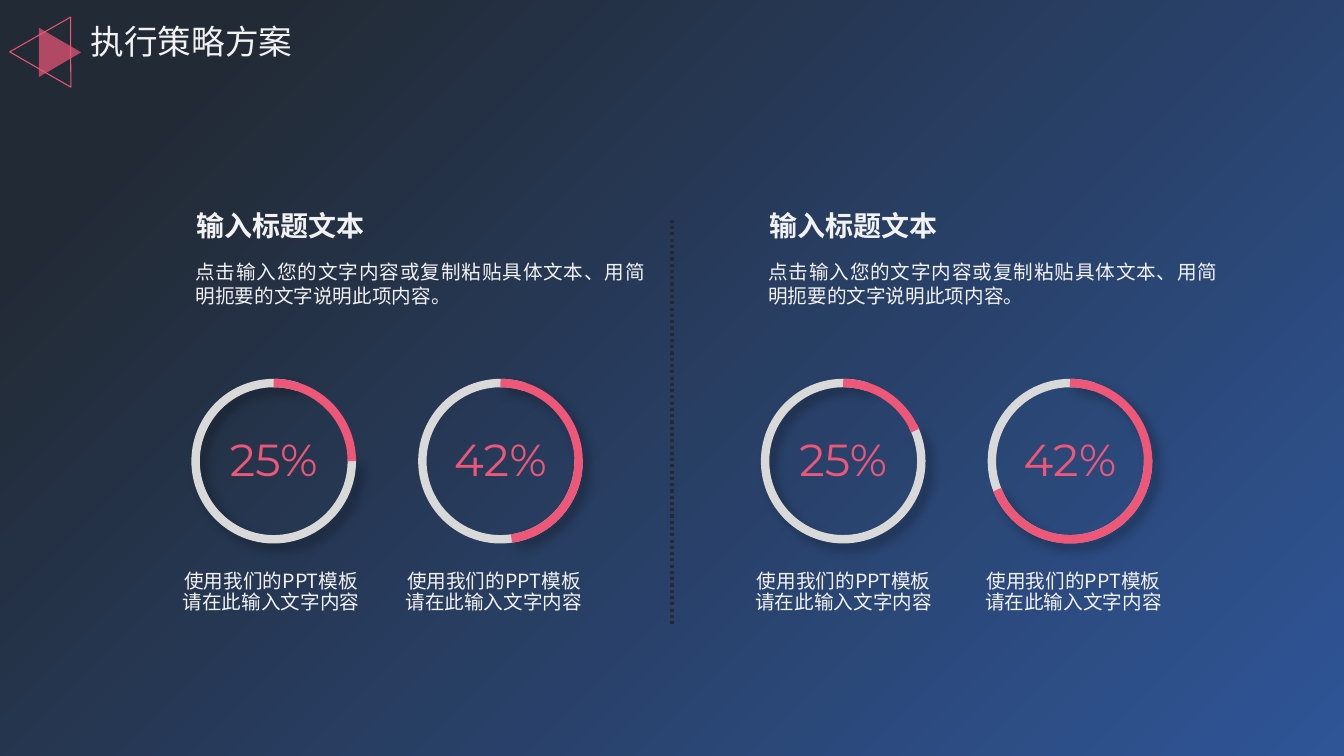
from dataclasses import dataclass

from lxml.etree import SubElement
from pptx import Presentation
from pptx.dml.color import RGBColor
from pptx.enum.dml import MSO_LINE
from pptx.enum.shapes import MSO_CONNECTOR as Connector, MSO_SHAPE as Preset
from pptx.enum.text import MSO_ANCHOR as Anchor, PP_ALIGN as Align
from pptx.oxml.ns import qn
from pptx.util import Pt

TITLE = "执行策略方案"
HEADING = "输入标题文本"
BODY = "点击输入您的文字内容或复制粘贴具体文本、用简明扼要的文字说明此项内容。"
CAPTION = ["使用我们的PPT模板", "请在此输入文字内容"]

# label, end angle of the value, start angle of the track, shadowed arc, caption left
PANELS = [
    [("25%", 0, 358.28, "track", 90.7), ("42%", 81.92, 358.28, "value", 249.8)],
    [("25%", 337, 333.26, "track", 499.7), ("42%", 158.58, 358.28, "value", 663.8)],
]


@dataclass(frozen=True)
class Theme:
    cjk: str = "Noto Sans CJK SC"
    latin: str = "Montserrat"
    dark: str = "222A35"
    blue: str = "2F5597"
    accent: str = "EE5778"
    track: str = "D9D9D9"
    text: str = "F2F2F2"
    title_size: int = 24
    heading_size: int = 20
    body_size: int = 14
    percent_size: int = 32
    ring_line: int = 6


theme = Theme()

TEXT_LEFT, TEXT_STEP, TEXT_WIDTH = 139.7, 409, 321.1
RING_LEFT, RING_TOP, RING_SIZE = 139.7, 273.6, 111.6
RING_STEP, RING_PANEL_STEP = 162, 406.8
TOP_ANGLE, TRACK_END = 270, 287.7
CAPTION_WIDTH = 206


def color(value):
    return RGBColor.from_string(value)


def write(shape, lines, size, font=theme.cjk, ink=theme.text, bold=False,
          align=Align.LEFT, spacing=1.0, inset=None, wrap=True):
    frame = shape.text_frame
    frame.word_wrap = wrap
    frame.vertical_anchor = Anchor.TOP
    if inset is not None:
        frame.margin_left = frame.margin_right = Pt(inset)
        frame.margin_top = frame.margin_bottom = Pt(inset)
    for index, line in enumerate(lines):
        paragraph = frame.add_paragraph() if index else frame.paragraphs[0]
        paragraph.alignment = align
        paragraph.line_spacing = spacing
        run = paragraph.add_run()
        run.text = line
        run.font.size = Pt(size)
        run.font.bold = bold
        run.font.name = font
        run.font.color.rgb = color(ink)
        SubElement(run.font._element, qn("a:ea"), typeface=font)


def add_text(slide, left, top, width, height, lines, size, **style):
    box = slide.shapes.add_textbox(Pt(left), Pt(top), Pt(width), Pt(height))
    write(box, lines, size, **style)


def add_outline(slide, preset, left, top, width, height, ink, weight):
    shape = slide.shapes.add_shape(preset, Pt(left), Pt(top), Pt(width), Pt(height))
    shape.shadow.inherit = False
    shape.fill.background()
    shape.line.color.rgb = color(ink)
    shape.line.width = Pt(weight)
    return shape


def add_arc(slide, left, start, end, ink, shadowed):
    """Draw an arc clockwise between two angles in degrees."""
    arc = add_outline(slide, Preset.ARC, left, RING_TOP, RING_SIZE, RING_SIZE,
                      ink, theme.ring_line)
    for index, angle in enumerate((start, end)):
        arc.adjustments[index] = angle * 0.6  # 60000 units a degree, scaled by 100000
    if shadowed:
        effects = arc._element.spPr.find(qn("a:effectLst"))
        shadow = SubElement(effects, qn("a:outerShdw"), blurRad=str(Pt(8)),
                            dist=str(Pt(6)), dir="2700000", algn="tl", rotWithShape="0")
        black = SubElement(shadow, qn("a:srgbClr"), val="000000")
        SubElement(black, qn("a:alpha"), val="30000")


def add_background(slide):
    fill = slide.background.fill
    fill.gradient()
    fill.gradient_angle = 315
    for stop, ink, position in zip(fill.gradient_stops, (theme.dark, theme.blue), (0.13, 1)):
        stop.color.rgb = color(ink)
        stop.position = position


def add_title(slide):
    solid = add_outline(slide, Preset.ISOSCELES_TRIANGLE, 25.2, 22.3, 35.3, 30.2,
                        theme.accent, 0)
    solid.rotation = 90
    solid.line.fill.background()
    solid.fill.solid()
    solid.fill.fore_color.rgb = color(theme.accent)
    SubElement(solid._element.spPr.find(".//" + qn("a:srgbClr")), qn("a:alpha"), val="70000")
    outline = add_outline(slide, Preset.ISOSCELES_TRIANGLE, 14.4, 9.4, 50.4, 43.2,
                          theme.accent, 0)
    outline.rotation = 30

    title = slide.shapes.title
    title.left, title.top, title.width, title.height = Pt(57.6), Pt(11.5), Pt(160), Pt(42)
    write(title, [TITLE], theme.title_size, wrap=False)


def add_divider(slide):
    divider = slide.shapes.add_connector(Connector.STRAIGHT, Pt(480), Pt(157), Pt(480), Pt(448))
    divider.line.color.rgb = color(theme.dark)
    divider.line.width = Pt(2.25)
    divider.line.dash_style = MSO_LINE.ROUND_DOT
    SubElement(divider._element.spPr, qn("a:effectLst"))


def add_ring(slide, left, label, value_end, track_start, shadowed, caption_left):
    add_arc(slide, left, track_start, TRACK_END, theme.track, shadowed == "track")
    add_arc(slide, left, TOP_ANGLE, value_end, theme.accent, shadowed == "value")
    add_text(slide, left, 304.6, RING_SIZE, 46, [label], theme.percent_size,
             font=theme.latin, ink=theme.accent, align=Align.CENTER)
    add_text(slide, caption_left, 404, CAPTION_WIDTH, 45, CAPTION, theme.body_size,
             align=Align.CENTER, spacing=0.93)


def main():
    presentation = Presentation()
    presentation.slide_width, presentation.slide_height = Pt(960), Pt(540)
    slide = presentation.slides.add_slide(presentation.slide_layouts[5])
    add_background(slide)
    add_title(slide)
    add_divider(slide)
    for panel, rings in enumerate(PANELS):
        text_left = TEXT_LEFT + panel * TEXT_STEP
        add_text(slide, text_left + 0.7, 148.7, 156, 29, [HEADING], theme.heading_size,
                 bold=True, inset=0)
        add_text(slide, text_left, 186, TEXT_WIDTH, 41, [BODY], theme.body_size,
                 align=Align.JUSTIFY, inset=0)
        for column, ring in enumerate(rings):
            add_ring(slide, RING_LEFT + panel * RING_PANEL_STEP + column * RING_STEP, *ring)
    presentation.save("out.pptx")


if __name__ == "__main__":
    main()
